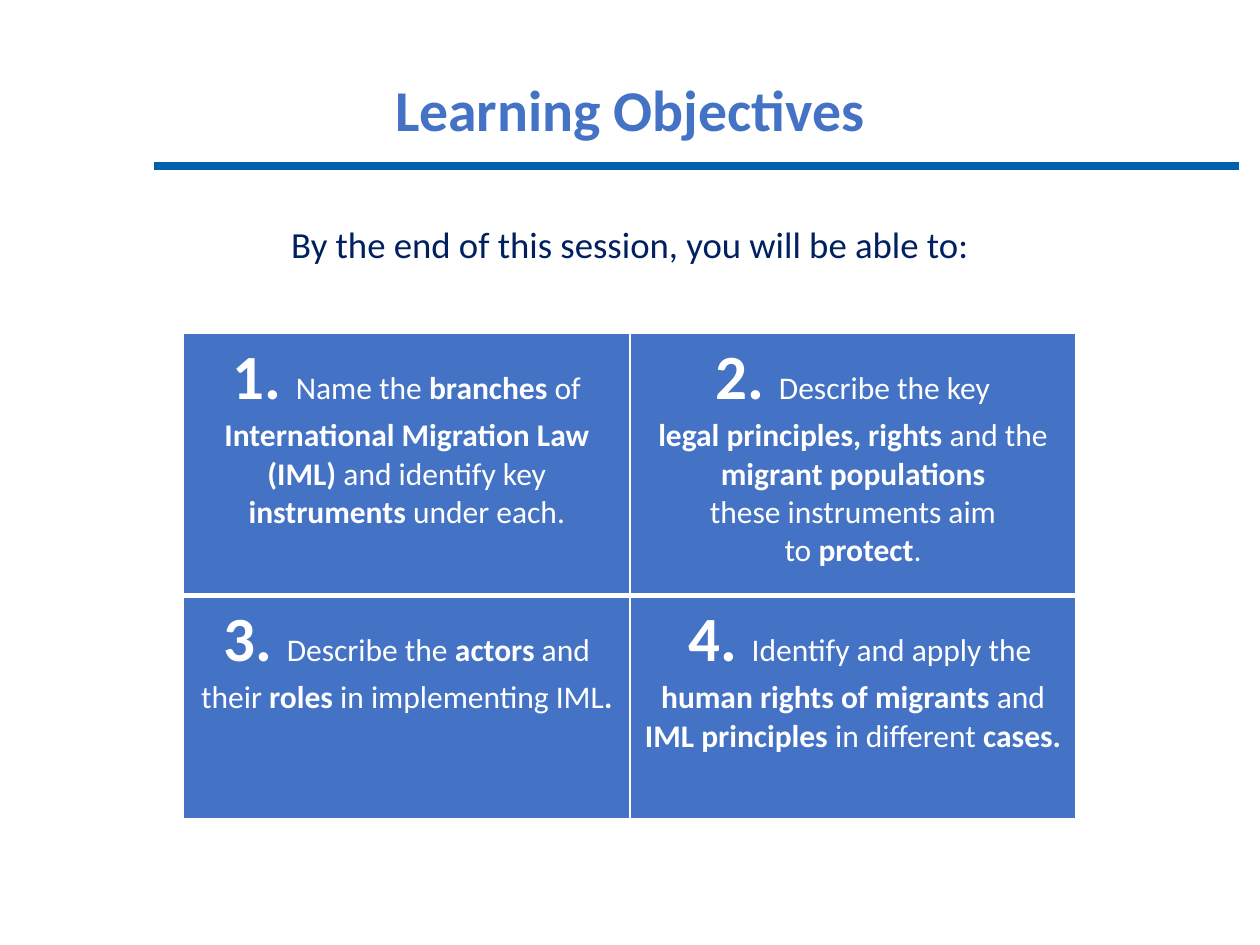
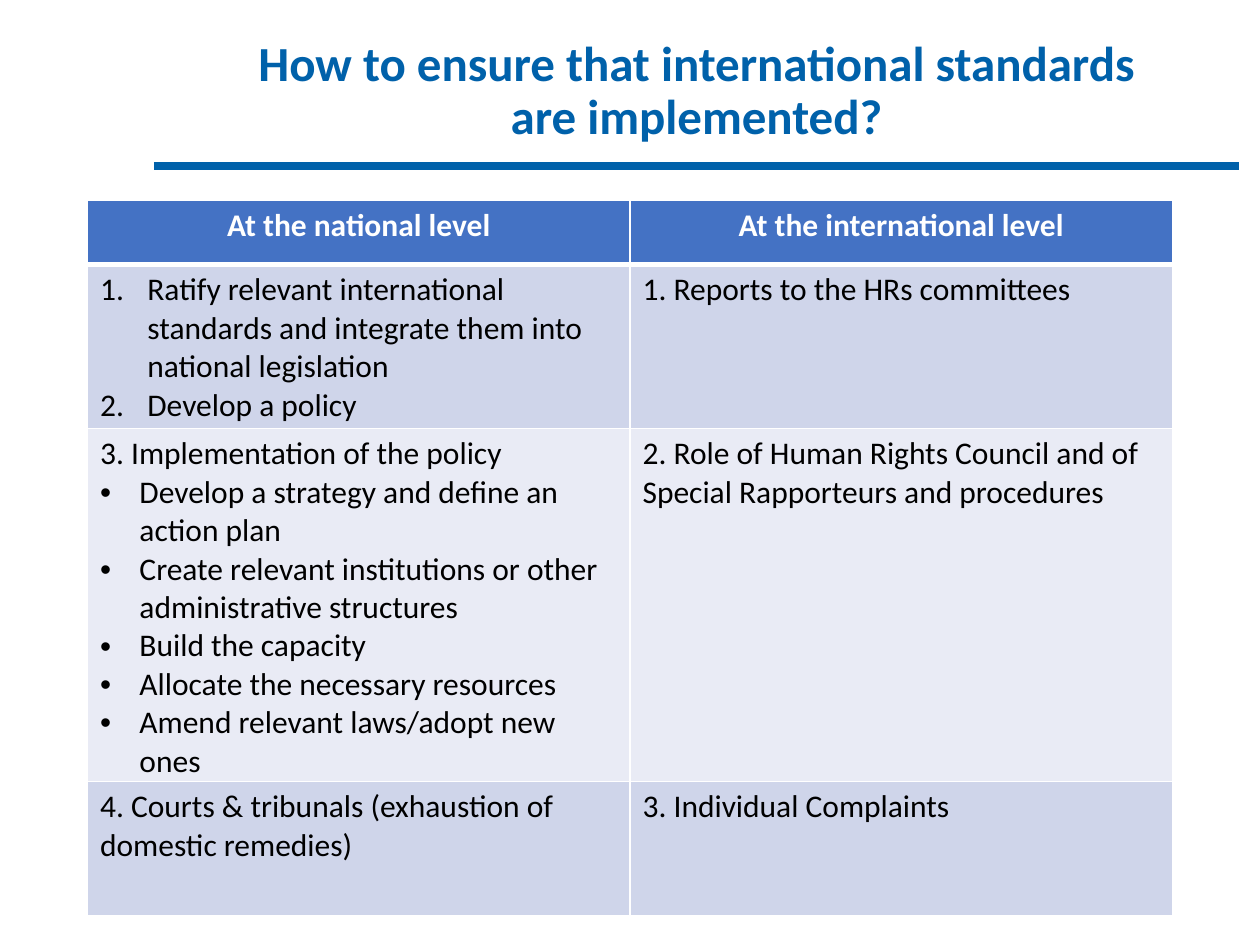
from lxml import etree
from pptx import Presentation, util as u
from pptx.dml.color import RGBColor
from pptx.enum import shapes, text
from pptx.oxml.ns import qn

FONT = "Calibri"
BLUE, RULE_BLUE, NAVY = "4472C4", "0061AA", "002060"
WHITE, BLACK = "FFFFFF", "000000"
BANDS = ["CFD5EA", "E9EBF5"]
CENTER, LEFT = text.PP_ALIGN.CENTER, text.PP_ALIGN.LEFT

# Each objective: number, then paragraphs; *stars* enclose bold words
OBJECTIVES = [
    [("1. ", ["Name the *branches* of *International Migration Law (IML) *"
              "and identify key *instruments* under each."]),
     ("2. ", ["Describe the key\n*legal principles, rights* and the\n"
              "*migrant populations\n*these instruments aim",
              "to *protect*."])],
    [("3. ", ["Describe the *actors* and their *roles* in implementing IML*.*"]),
     (" 4. ", ["Identify and apply the *human rights of migrants *and"
               "* IML principles *in different *cases.*"])],
]

# Each measure: list marker ("1" numbered, "•" bulleted, "" none) and text
LEVELS = ["At the national level", "At the international level"]
MEASURES = [
    [[("1", "Ratify relevant international standards and integrate them "
            "into national legislation"),
      ("1", "Develop a policy")],
     [("", "1. Reports to the HRs committees")]],
    [[("", "3. Implementation of the policy"),
      ("•", "Develop a strategy and define an action plan"),
      ("•", "Create relevant institutions or other administrative structures"),
      ("•", "Build the capacity"),
      ("•", "Allocate the necessary resources"),
      ("•", "Amend relevant laws/adopt new ones")],
     [("", "2. Role of Human Rights Council and of Special Rapporteurs "
           "and procedures")]],
    [[("", "4. Courts & tribunals (exhaustion of domestic remedies)")],
     [("", "3. Individual Complaints")]],
]


def rgb(value):
    return RGBColor.from_string(value)


def write(paragraph, words, size, color, bold=False, align=CENTER):
    """Add words run by run; stars switch bold, newlines break the line."""
    paragraph.alignment = align
    for part_no, part in enumerate(words.split("*")):
        for line_no, line in enumerate(part.split("\n")):
            if line_no:
                paragraph.add_line_break()
            if line:
                run = paragraph.add_run()
                run.text = line
                run.font.name, run.font.size = FONT, u.Pt(size)
                run.font.bold = bold or part_no % 2 == 1
                run.font.color.rgb = rgb(color)


def paragraphs(frame, count):
    return [frame.paragraphs[0]] + [frame.add_paragraph() for _ in range(count - 1)]


def add_marker(paragraph, marker):
    if not marker:
        return
    indent = u.Pt(27 if marker == "1" else 22.5)
    props = paragraph._p.get_or_add_pPr()
    props.set("marL", str(indent))
    props.set("indent", str(-indent))
    if marker == "1":
        etree.SubElement(props, qn("a:buAutoNum"), type="arabicPeriod")
    else:
        etree.SubElement(props, qn("a:buFont"), typeface="Arial")
        etree.SubElement(props, qn("a:buChar"), char=marker)


def add_heading(slide, box, words, size, color, bold=True,
                anchor=text.MSO_ANCHOR.MIDDLE):
    frame = slide.shapes.add_textbox(*map(u.Pt, box)).text_frame
    frame.word_wrap = True
    frame.vertical_anchor = anchor
    frame.paragraphs[0].line_spacing = 0.9
    write(frame.paragraphs[0], words, size, color, bold)


def add_rule(slide):
    y = u.Pt(95)
    rule = slide.shapes.add_connector(
        shapes.MSO_CONNECTOR.STRAIGHT, u.Pt(88), y, u.Pt(708), y)
    rule.line.color.rgb = rgb(RULE_BLUE)
    rule.line.width = u.Pt(4.5)
    etree.SubElement(rule._element.spPr, qn("a:effectLst"))


def style_cell(cell, fill, row_no):
    """White grid, with a thicker line under the first row."""
    props = cell._tc.get_or_add_tcPr()
    thick_edge = {0: "lnB", 1: "lnT"}.get(row_no)
    for edge in ("lnL", "lnR", "lnT", "lnB"):
        width = u.Pt(3 if edge == thick_edge else 1)
        line = etree.SubElement(props, qn("a:" + edge), w=str(width))
        solid = etree.SubElement(line, qn("a:solidFill"))
        etree.SubElement(solid, qn("a:srgbClr"), val=WHITE)
    cell.fill.solid()
    cell.fill.fore_color.rgb = rgb(fill)


def add_grid(slide, left, top, width, row_heights, fills):
    grid = slide.shapes.add_table(
        len(row_heights), 2, u.Pt(left), u.Pt(top), u.Pt(width),
        u.Pt(sum(row_heights))).table
    grid.first_row = grid.horz_banding = False
    for row_no, (height, fill) in enumerate(zip(row_heights, fills)):
        grid.rows[row_no].height = u.Pt(height)
        for cell in grid.rows[row_no].cells:
            style_cell(cell, fill, row_no)
    return grid


def add_objectives(slide, left, top, width):
    grid = add_grid(slide, left, top, width, [149.8, 127.4], [BLUE] * 2)
    for row_no, row in enumerate(OBJECTIVES):
        for col_no, (number, lines) in enumerate(row):
            frame = grid.cell(row_no, col_no).text_frame
            write(frame.paragraphs[0], number, 36, WHITE, bold=True)
            for paragraph, line in zip(paragraphs(frame, len(lines)), lines):
                write(paragraph, line, 18, WHITE)


def add_measures(slide, left, top, width):
    fills = [BLUE, BANDS[0], BANDS[1], BANDS[0]]
    grid = add_grid(slide, left, top, width, [36.7, 89.3, 193, 77], fills)
    for col_no, level in enumerate(LEVELS):
        write(grid.cell(0, col_no).text_frame.paragraphs[0], level, 18, WHITE, True)
    for row_no, row in enumerate(MEASURES, start=1):
        for col_no, items in enumerate(row):
            frame = grid.cell(row_no, col_no).text_frame
            for paragraph, (marker, words) in zip(paragraphs(frame, len(items)), items):
                add_marker(paragraph, marker)
                write(paragraph, words, 18, BLACK, align=LEFT)


def new_slide(deck):
    slide = deck.slides.add_slide(deck.slide_layouts[6])
    add_rule(slide)
    return slide


def objectives_slide(deck):
    slide = new_slide(deck)
    add_heading(slide, (49.5, 12, 621, 104.5), "Learning Objectives", 33, BLUE)
    add_heading(slide, (85, 126, 550, 43),
                "By the end of this session, you will be able to:",
                21, NAVY, bold=False, anchor=text.MSO_ANCHOR.TOP)
    add_objectives(slide, 105, 190.4, 510)


def standards_slide(deck):
    slide = new_slide(deck)
    add_heading(slide, (88, 12, 620, 81),
                "How to ensure that international standards\nare implemented?",
                28, RULE_BLUE)
    add_measures(slide, 50, 114.5, 620)


def main():
    deck = Presentation()
    deck.slide_width, deck.slide_height = u.Pt(720), u.Pt(540)
    objectives_slide(deck)
    standards_slide(deck)
    deck.save("out.pptx")


if __name__ == "__main__":
    main()
